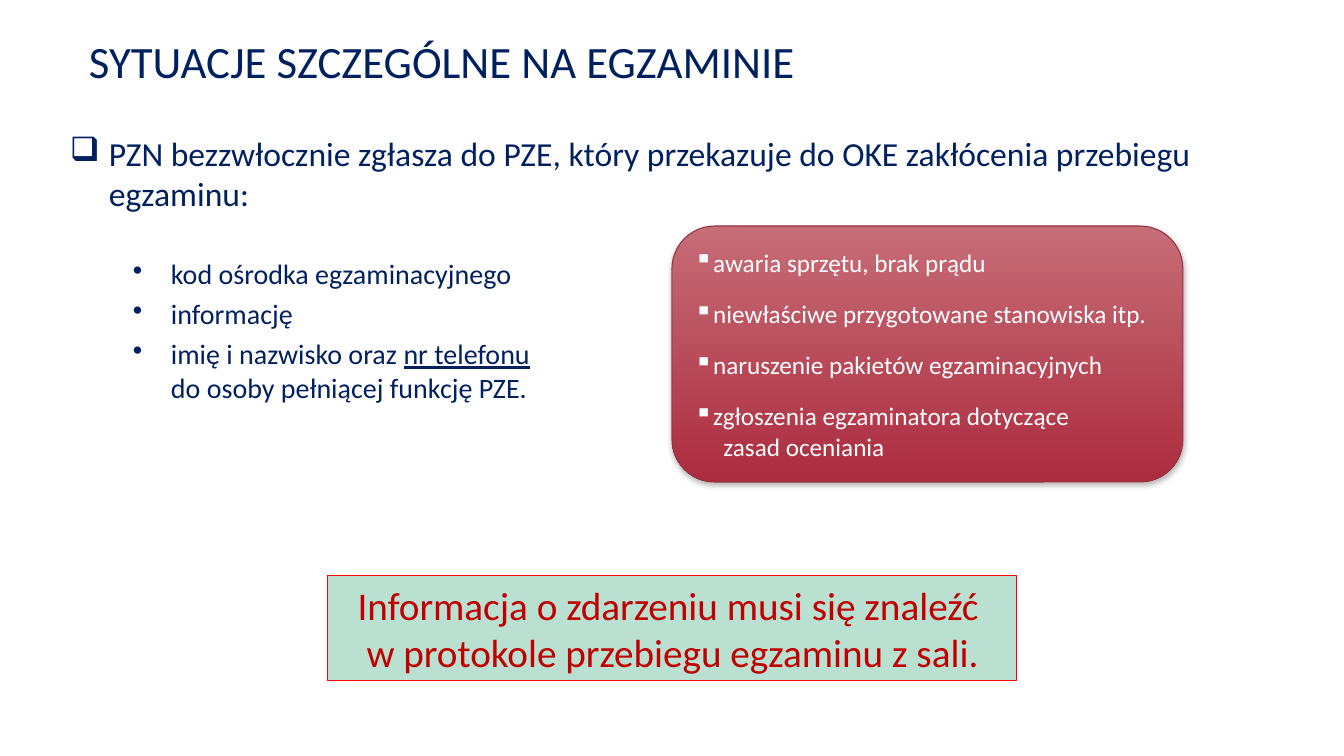
from lxml.etree import SubElement
from pptx import Presentation
from pptx.dml.color import RGBColor
from pptx.enum.shapes import MSO_SHAPE
from pptx.enum.text import MSO_ANCHOR, PP_ALIGN
from pptx.oxml.ns import qn
from pptx.util import Pt

EMU_PER_PX = 914400 / 100.8
FONT = "Calibri"
COLORS = {
    "white": "FFFFFF", "navy": "002060", "mint": "BAE0D2", "red": "FF0000",
    "dark_red": "C00000", "rose": "C66D77", "crimson": "AC2C3F",
    "card_edge": "953241", "black": "000000",
}


def px(n):
    return round(n * EMU_PER_PX)


def rgb(name):
    return RGBColor.from_string(COLORS[name])


def add_box(slide, x, y, w, h, fill=None, line=None, shape=MSO_SHAPE.RECTANGLE):
    sp = slide.shapes.add_shape(shape, px(x), px(y), px(w), px(h))
    sp.shadow.inherit = False
    if fill:
        sp.fill.solid()
        sp.fill.fore_color.rgb = rgb(fill)
    else:
        sp.fill.background()
    if line:
        sp.line.color.rgb = rgb(line)
        sp.line.width = Pt(0.75)
    else:
        sp.line.fill.background()
    return sp


def add_gradient(sp, top, bottom):
    sp.fill.gradient()
    sp.fill.gradient_angle = 270
    for stop, name in zip(sp.fill.gradient_stops, (top, bottom)):
        stop.color.rgb = rgb(name)


def add_shadow(sp):
    effects = sp._element.spPr.find(qn("a:effectLst"))
    shadow = SubElement(effects, qn("a:outerShdw"), blurRad=str(Pt(4)),
                        dist=str(Pt(2)), dir="5400000", rotWithShape="0")
    color = SubElement(shadow, qn("a:srgbClr"), val=COLORS["black"])
    SubElement(color, qn("a:alpha"), val="28000")


def add_bullet(p, char, color, margin, hang, tab=None):
    pPr = p._p.get_or_add_pPr()
    pPr.set("marL", str(px(margin)))
    pPr.set("indent", str(-px(hang)))
    bu_color = SubElement(pPr, qn("a:buClr"))
    SubElement(bu_color, qn("a:srgbClr"), val=COLORS[color])
    SubElement(pPr, qn("a:buChar"), char=char)
    if tab:
        tabs = SubElement(pPr, qn("a:tabLst"))
        SubElement(tabs, qn("a:tab"), pos=str(px(tab)), algn="l")


def add_text(sp, paragraphs, size, color, bullet=None, align=PP_ALIGN.LEFT,
             anchor=MSO_ANCHOR.TOP, before=0, after=0, spacing=None, insets=None):
    """Fill a shape; a paragraph is a list of runs, and a (text,) run is underlined."""
    tf = sp.text_frame
    tf.word_wrap = True
    tf.vertical_anchor = anchor
    if insets:
        (tf.margin_left, tf.margin_top,
         tf.margin_right, tf.margin_bottom) = map(px, insets)
    for i, runs in enumerate(paragraphs):
        p = tf.add_paragraph() if i else tf.paragraphs[0]
        if bullet:
            add_bullet(p, color=color, **bullet)
        p.alignment = align
        p.space_before = Pt(before if i else 0)
        p.space_after = Pt(after)
        if spacing:
            p.line_spacing = spacing
        for run in runs:
            underlined = isinstance(run, tuple)
            for j, part in enumerate((run[0] if underlined else run).split("\n")):
                if j:
                    p.add_line_break()
                r = p.add_run()
                r.text = part
                r.font.name = FONT
                r.font.size = Pt(size)
                r.font.color.rgb = rgb(color)
                if underlined:
                    r.font.underline = True


def main():
    prs = Presentation()
    prs.slide_width, prs.slide_height = px(1344), px(756)
    slide = prs.slides.add_slide(prs.slide_layouts[6])

    title = add_box(slide, 72, 21, 828, 86, fill="white")
    add_text(title, [["SYTUACJE SZCZEGÓLNE NA EGZAMINIE"]], 32, "navy",
             anchor=MSO_ANCHOR.MIDDLE, spacing=0.9, insets=(17, 0, 0, 0))

    lead = add_box(slide, 60, 128, 1249, 448, fill="white")
    add_text(lead, [["PZN bezzwłocznie zgłasza do PZE, który przekazuje do OKE "
                     "zakłócenia przebiegu egzaminu:"]], 24, "navy",
             bullet=dict(char="❑", margin=39, hang=39))

    details = add_box(slide, 87, 252, 475, 160)
    add_text(details, [
        ["kod ośrodka egzaminacyjnego"],
        ["informację"],
        ["imię i nazwisko oraz ", ("nr telefonu ",), "do osoby pełniącej funkcję PZE."],
    ], 20, "navy", bullet=dict(char="•", margin=74, hang=38), before=4.5)

    notice = add_box(slide, 328, 576, 689, 105, fill="mint", line="red")
    add_text(notice, [["Informacja o zdarzeniu musi się znaleźć "],
                      ["w protokole przebiegu egzaminu z sali."]],
             28, "dark_red", align=PP_ALIGN.CENTER)

    card = add_box(slide, 672, 226, 511, 256, line="card_edge",
                   shape=MSO_SHAPE.ROUNDED_RECTANGLE)
    add_gradient(card, "rose", "crimson")
    add_shadow(card)
    add_text(card, [
        ["awaria sprzętu, brak prądu"],
        ["niewłaściwe przygotowane stanowiska itp."],
        ["naruszenie pakietów egzaminacyjnych"],
        ["zgłoszenia egzaminatora dotyczące\n\tzasad oceniania"],
    ], 18, "white", bullet=dict(char="▪", margin=7, hang=7, tab=29),
        anchor=MSO_ANCHOR.MIDDLE, before=13.5, after=1.5)

    prs.save("out.pptx")


if __name__ == "__main__":
    main()
